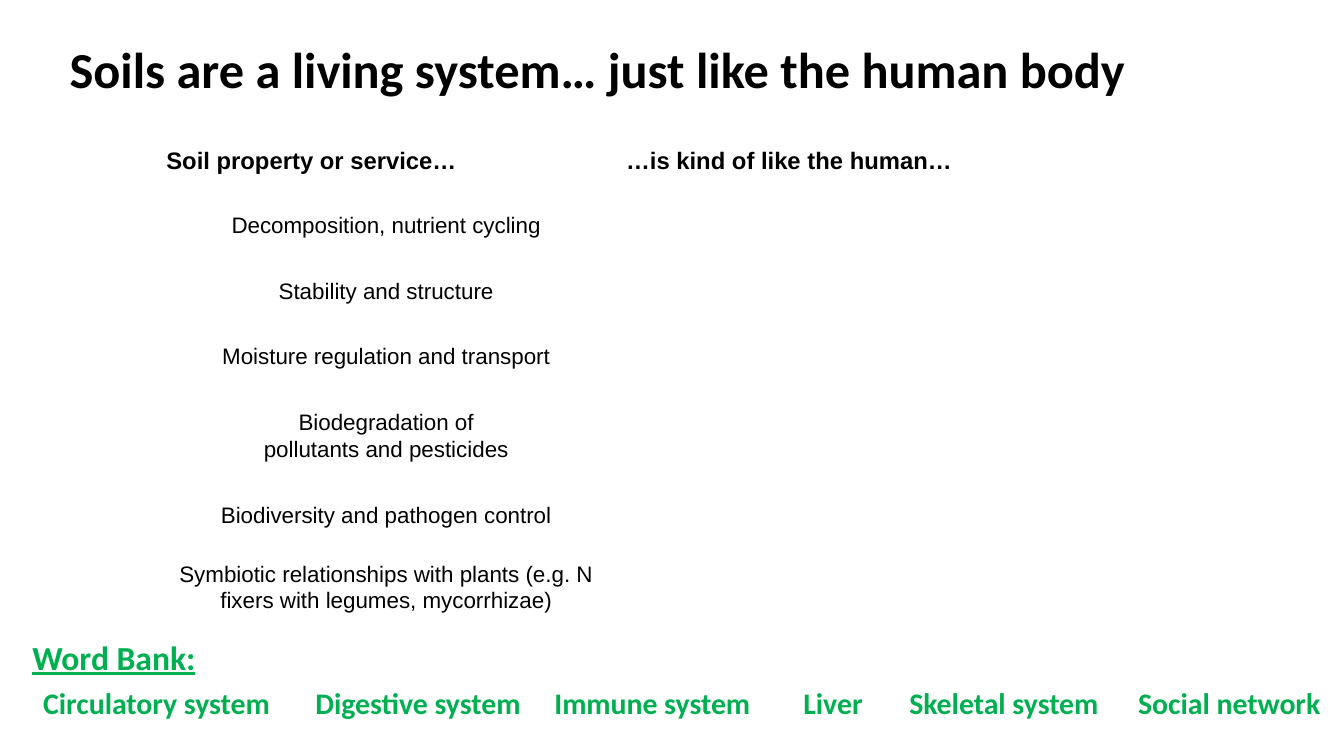
import pptx
import pptx.util
import pptx.dml.color
import pptx.enum.text

Inches = pptx.util.Inches
Pt = pptx.util.Pt
ALIGN = pptx.enum.text.PP_ALIGN
ANCHOR = pptx.enum.text.MSO_ANCHOR
FIT = pptx.enum.text.MSO_AUTO_SIZE
BLACK = pptx.dml.color.RGBColor(0x00, 0x00, 0x00)
GREEN = pptx.dml.color.RGBColor(0x00, 0xB0, 0x50)


def style(para, name, size, color, bold, align=ALIGN.LEFT):
    para.alignment = align
    para.font.name = name
    para.font.size = Pt(size)
    para.font.color.rgb = color
    para.font.bold = bold


def add_label(page, text, left, top, width, height, size, wrap, align=ALIGN.LEFT):
    box = page.shapes.add_textbox(Inches(left), Inches(top), Inches(width), Inches(height))
    box.text_frame.word_wrap = wrap
    box.text_frame.auto_size = FIT.SHAPE_TO_FIT_TEXT
    para = box.text_frame.paragraphs[0]
    para.text = text
    style(para, "Calibri", size, GREEN, True, align)
    return para


deck = pptx.Presentation()
deck.slide_width = Inches(13.33)
deck.slide_height = Inches(7.5)
page = deck.slides.add_slide(deck.slide_layouts[5])

title = page.shapes.title
title.left, title.top = Inches(0.59), Inches(0.45)
title.width, title.height = Inches(11.15), Inches(0.53)
title.text_frame.text = "Soils are a living system… just like the human body"
title.text_frame.auto_size = FIT.NONE
title.text_frame.vertical_anchor = ANCHOR.MIDDLE
heading = title.text_frame.paragraphs[0]
heading.line_spacing = 0.9
style(heading, "Calibri", 36, BLACK, True)

rows = [
    ("Soil property or service…", "…is kind of like the human…"),
    ("Decomposition, nutrient cycling", ""),
    ("Stability and structure", ""),
    ("Moisture regulation and transport", ""),
    ("Biodegradation of\npollutants and pesticides", ""),
    ("Biodiversity and pathogen control", ""),
    ("Symbiotic relationships with plants (e.g. N fixers with legumes, mycorrhizae)", ""),
]
row_heights = [0.65, 0.65, 0.65, 0.65, 0.92, 0.65, 0.79]
column_widths = [4.56, 6.26]

table = page.shapes.add_table(
    len(rows), len(column_widths), Inches(1.55), Inches(1.26),
    Inches(sum(column_widths)), Inches(sum(row_heights))).table
table.first_row = False
table.horz_banding = False
for column, width in zip(table.columns, column_widths):
    column.width = Inches(width)
for row_index, (texts, height) in enumerate(zip(rows, row_heights)):
    table.rows[row_index].height = Inches(height)
    header = row_index == 0
    for column_index, text in enumerate(texts):
        cell = table.cell(row_index, column_index)
        cell.fill.background()
        cell.vertical_anchor = ANCHOR.MIDDLE
        cell.margin_top = cell.margin_bottom = 0
        cell.text = text
        paragraphs = cell.text_frame.paragraphs
        for para in paragraphs:
            para.line_spacing = 1.07
            para.space_after = Pt(8 if len(paragraphs) == 1 else 0)
            style(para, "Arial", 17 if header else 16, BLACK, header,
                  ALIGN.LEFT if header else ALIGN.CENTER)

bank = add_label(page, "Word Bank:", -0.19, 6.24, 2.64, 0.51, 24, True, ALIGN.CENTER)
bank.font.underline = True
bank.line_spacing = 1.07
bank.space_after = Pt(10.7)

words = [
    ("Circulatory system", 0.33, 2.58),
    ("Digestive system", 3.03, 2.29),
    ("Immune system", 5.4, 2.19),
    ("Liver", 7.87, 0.8),
    ("Skeletal system", 8.92, 2.13),
    ("Social network", 11.19, 2.04),
]
for word, left, width in words:
    add_label(page, word, left, 6.74, width, 0.46, 21.3, False)

deck.save("out.pptx")
